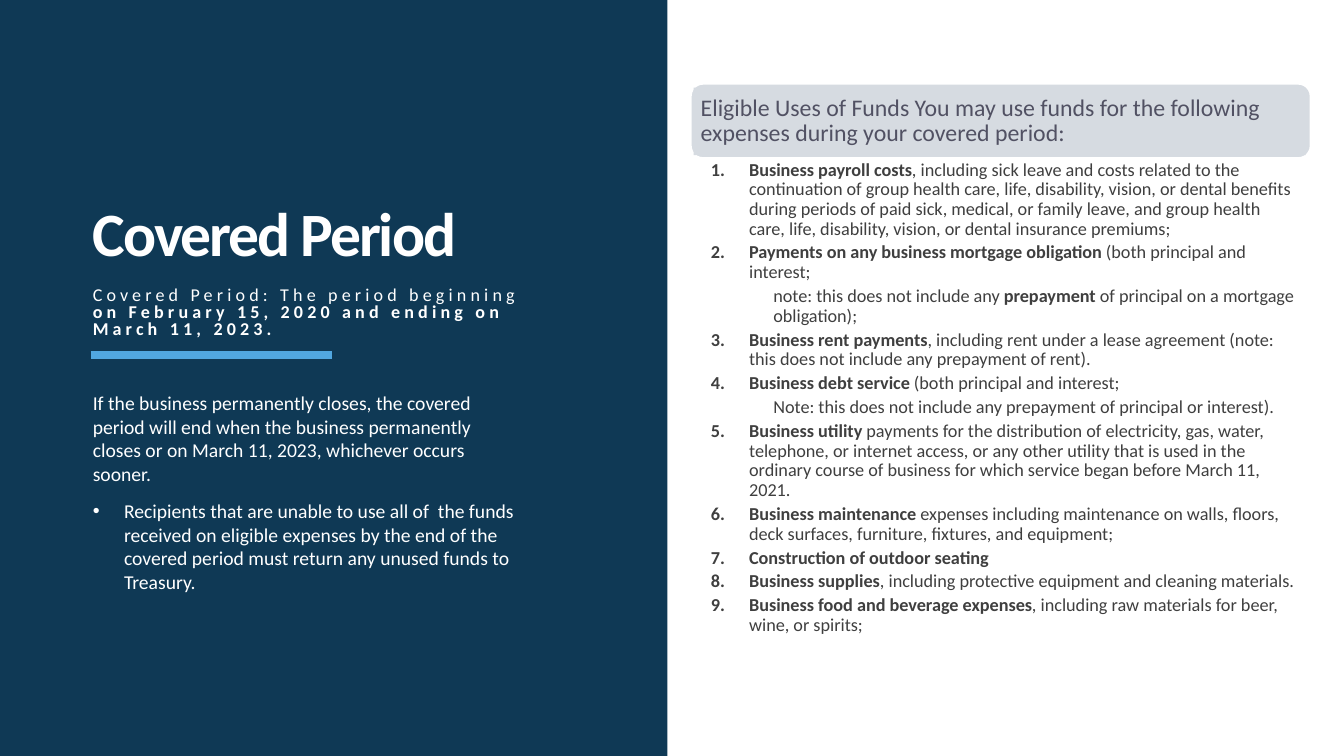
from lxml import etree
from pptx import Presentation
from pptx.dml.color import RGBColor
from pptx.enum import shapes, text
from pptx.oxml import ns
from pptx.util import Inches, Pt

NAVY = RGBColor(0x0F, 0x39, 0x55)
BLUE = RGBColor(0x51, 0xA7, 0xE0)
PALE = RGBColor(0xD6, 0xDB, 0xE1)
SLATE = RGBColor(0x51, 0x51, 0x63)
GRAY = RGBColor(0x3F, 0x3F, 0x3F)
WHITE = RGBColor(0xFF, 0xFF, 0xFF)

TITLE = "Covered Period"
PERIOD = [("Covered Period: The period beginning ", False),
          ("on February 15, 2020 and ending on March 11, 2023.", True)]
CLOSE = ("If the business permanently closes, the covered period will end when the "
         "business permanently closes or on March 11, 2023, whichever occurs sooner.")
RETURN = ("Recipients that are unable to use all of  the funds received on eligible "
          "expenses by the end of the covered period must return any unused funds to Treasury.")
HEAD = ("Eligible Uses of Funds You may use funds for the following expenses "
        "during your covered period:")
ITEM, NOTE = 1, 3
USES = [
    (ITEM, [("Business payroll costs", True),
            (", including sick leave and costs related to the continuation of group health "
             "care, life, disability, vision, or dental benefits during periods of paid sick, "
             "medical, or family leave, and group health care, life, disability, vision, or "
             "dental insurance premiums;", False)]),
    (ITEM, [("Payments on any business mortgage obligation ", True),
            ("(both principal and interest;", False)]),
    (NOTE, [("note: this does not include any ", False), ("prepayment", True),
            (" of principal on a mortgage obligation);", False)]),
    (ITEM, [("Business rent payments", True),
            (", including rent under a lease agreement (note: this does not include any "
             "prepayment of rent).", False)]),
    (ITEM, [("Business debt service ", True), ("(both principal and interest;", False)]),
    (NOTE, [("Note: this does not include any prepayment of principal or interest).", False)]),
    (ITEM, [("Business utility ", True),
            ("payments for the distribution of electricity, gas, water, telephone, or internet "
             "access, or any other utility that is used in the ordinary course of business for "
             "which service began before March 11, 2021.", False)]),
    (ITEM, [("Business maintenance ", True),
            ("expenses including maintenance on walls, floors, deck surfaces, furniture, "
             "fixtures, and equipment;", False)]),
    (ITEM, [("Construction of outdoor seating", True)]),
    (ITEM, [("Business supplies", True),
            (", including protective equipment and cleaning materials.", False)]),
    (ITEM, [("Business food and beverage expenses", True),
            (", including raw materials for beer, wine, or spirits;", False)]),
]


def place(shape, left, top, width, height):
    shape.left, shape.top = Inches(left), Inches(top)
    shape.width, shape.height = Inches(width), Inches(height)


def setup(shape, pads, anchor=text.MSO_ANCHOR.TOP):
    frame = shape.text_frame
    frame.word_wrap = True
    frame.auto_size = text.MSO_AUTO_SIZE.NONE
    frame.vertical_anchor = anchor
    (frame.margin_left, frame.margin_top,
     frame.margin_right, frame.margin_bottom) = map(Inches, pads)
    return frame


def bullet(para, tag, margin=0, hang=0, **attrs):
    props = para._p.get_or_add_pPr()
    props.set("marL", str(Inches(margin)))
    props.set("indent", str(-Inches(hang)))
    etree.SubElement(props, ns.qn("a:" + tag), attrs)


def write(para, runs, size, color, line=1.0, before=0, after=0, track=0):
    para.alignment = text.PP_ALIGN.LEFT
    para.line_spacing = line
    para.space_before, para.space_after = Pt(before), Pt(after)
    font = para.font
    font.name, font.size, font.color.rgb = "Calibri", Pt(size), color
    for words, bold in runs:
        run = para.add_run()
        run.text = words
        run.font.bold = bold
        if track:
            run._r.get_or_add_rPr().set("spc", str(int(track * 100)))


def block(slide, kind, box, fill):
    shape = slide.shapes.add_shape(kind, *map(Inches, box))
    shape.shadow.inherit = False
    shape.fill.solid()
    shape.fill.fore_color.rgb = fill
    shape.line.fill.background()
    return shape


def left_side(slide):
    panel = block(slide, shapes.MSO_SHAPE.RECTANGLE, (0, 0, 6.62, 7.5), NAVY)
    bar = slide.shapes.add_connector(shapes.MSO_CONNECTOR.STRAIGHT,
                                     *map(Inches, (0.9, 3.52, 3.29, 3.52)))
    bar.line.color.rgb, bar.line.width = BLUE, Pt(6)
    etree.SubElement(bar._element.spPr, ns.qn("a:effectLst"))
    for spot, shape in enumerate((panel, bar), 2):
        slide.shapes._spTree.insert(spot, shape._element)

    pads = (0, 0.05, 0.1, 0.05)
    title, period, detail = slide.placeholders
    for shape, top, height in ((title, 1.2, 1.53), (period, 2.8, 0.66), (detail, 3.83, 2.8)):
        place(shape, 0.92, top, 4.38, height)
    frame = setup(title, pads, text.MSO_ANCHOR.BOTTOM)
    write(frame.paragraphs[0], [(TITLE, True)], 44, WHITE, line=0.9, track=-1.5)

    para = setup(period, pads).paragraphs[0]
    bullet(para, "buNone")
    write(para, PERIOD, 12.9, WHITE, line=0.8, track=3)

    frame = setup(detail, pads)
    para = frame.paragraphs[0]
    bullet(para, "buNone")
    write(para, [(CLOSE, False)], 14, WHITE)
    para = frame.add_paragraph()
    para.level = 1
    bullet(para, "buChar", 0.31, 0.31, char="•")
    write(para, [(RETURN, False)], 14, WHITE, before=10)


def right_side(slide):
    card = block(slide, shapes.MSO_SHAPE.ROUNDED_RECTANGLE, (6.85, 0.83, 6.15, 0.74), PALE)
    card.line.color.rgb, card.line.width = WHITE, Pt(1.5)
    label = block(slide, shapes.MSO_SHAPE.RECTANGLE, (6.88, 0.87, 6.07, 0.67), PALE)
    frame = setup(label, [0.07] * 4, text.MSO_ANCHOR.MIDDLE)
    write(frame.paragraphs[0], [(HEAD, False)], 17, SLATE, line=0.9)

    uses = slide.shapes.add_textbox(*map(Inches, (6.85, 1.57, 6.15, 5.05)))
    frame = setup(uses, (0.2, 0.02, 0.13, 0.02))
    for spot, (level, runs) in enumerate(USES):
        para = frame.add_paragraph() if spot else frame.paragraphs[0]
        para.level = level
        if level == ITEM:
            bullet(para, "buAutoNum", 0.38, 0.38, type="arabicPeriod")
        else:
            bullet(para, "buNone", 0.62)
        write(para, runs, 13, GRAY, line=0.9, after=3)


def main():
    deck = Presentation()
    deck.slide_width, deck.slide_height = Inches(13.33), Inches(7.5)
    slide = deck.slides.add_slide(deck.slide_layouts[3])
    left_side(slide)
    right_side(slide)
    deck.save("out.pptx")


if __name__ == "__main__":
    main()
